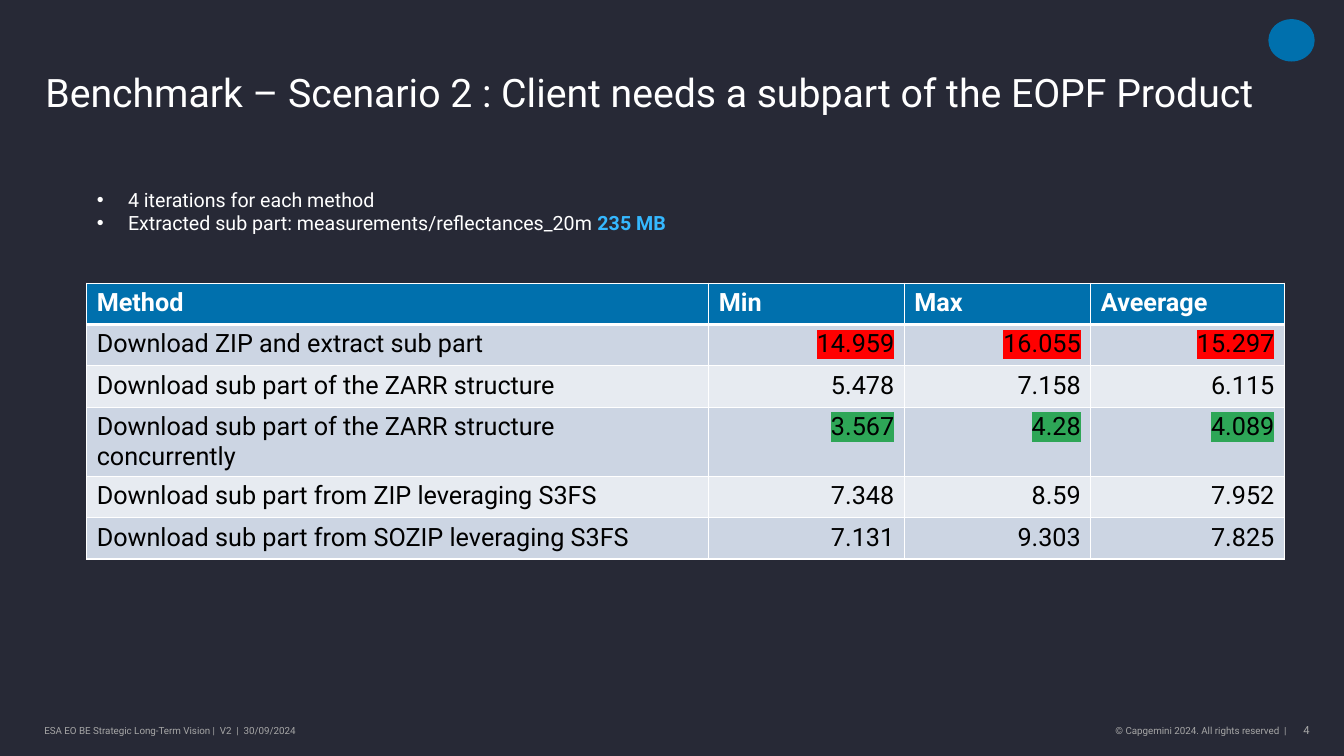
import pptx
import pptx.util
import pptx.dml.color
import pptx.enum.shapes
import pptx.enum.text
import pptx.oxml
import pptx.oxml.ns
from lxml import etree

Inches = pptx.util.Inches
Pt = pptx.util.Pt
ALIGN = pptx.enum.text.PP_ALIGN
ANCHOR = pptx.enum.text.MSO_ANCHOR

BACKGROUND, BLUE, SKY = "272936", "0070AD", "35B8FF"
WHITE, BLACK, GREY = "FFFFFF", "000000", "A6A6A6"
BANDS = ["CCD5E3", "E7EBF1"]
RED, GREEN = "FF0000", "2EA657"

HEADER = ["Method", "Min", "Max", "Aveerage"]
RESULTS = [
    ("Download ZIP and extract sub part", "14.959", "16.055", "15.297"),
    ("Download sub part of the ZARR structure", "5.478", "7.158", "6.115"),
    ("Download sub part of the ZARR structure concurrently", "3.567", "4.28", "4.089"),
    ("Download sub part from ZIP leveraging S3FS", "7.348", "8.59", "7.952"),
    ("Download sub part from SOZIP leveraging S3FS", "7.131", "9.303", "7.825"),
]
HIGHLIGHTS = {1: RED, 3: GREEN}
COLUMN_WIDTHS = [6.17, 1.94, 1.85, 1.92]


def rgb(code):
    return pptx.dml.color.RGBColor.from_string(code)


def add_xml(parent, tag, **attributes):
    return etree.SubElement(parent, pptx.oxml.ns.qn(tag), attributes)


def apply(target, values):
    for name, value in values.items():
        setattr(target, name, value)


class SlideBuilder:
    font = "Roboto"

    def __init__(self, deck):
        self.page = deck.slides.add_slide(deck.slide_layouts[1])
        fill = self.page.background.fill
        fill.solid()
        fill.fore_color.rgb = rgb(BACKGROUND)

    def span(self, para, text, size, color, bold=False, highlight=None):
        span = para.add_run()
        span.text = text
        apply(span.font, {"size": Pt(size), "bold": bold})
        span.font.color.rgb = rgb(color)
        if highlight:
            properties = span.font._element
            mark = add_xml(properties, "a:highlight")
            add_xml(mark, "a:srgbClr", val=highlight)
        span.font.name = self.font

    def frame(self, box, place, inset=(0, 0), anchor=ANCHOR.MIDDLE):
        apply(box, dict(zip(("left", "top", "width", "height"), map(Inches, place))))
        across, down = map(Inches, inset)
        apply(box.text_frame, {
            "margin_left": across, "margin_right": across,
            "margin_top": down, "margin_bottom": down,
            "word_wrap": True, "vertical_anchor": anchor,
            "auto_size": pptx.enum.text.MSO_AUTO_SIZE.NONE,
        })
        return box.text_frame

    def title(self, text, place):
        frame = self.frame(self.page.shapes.title, place, anchor=ANCHOR.BOTTOM)
        para = frame.paragraphs[0]
        apply(para, {"alignment": ALIGN.LEFT, "line_spacing": 0.9})
        self.span(para, text, 28, WHITE)

    def bullets(self, items, place):
        frame = self.frame(self.page.placeholders[1], place, (0.1, 0.05))
        for index, spans in enumerate(items):
            para = frame.add_paragraph() if index else frame.paragraphs[0]
            apply(para, {"space_before": Pt(0), "alignment": ALIGN.LEFT})
            properties = para._p.get_or_add_pPr()
            indent = Inches(0.31)
            properties.set("marL", str(indent))
            properties.set("indent", str(-indent))
            add_xml(properties, "a:buFont", typeface="Arial")
            add_xml(properties, "a:buChar", char="•")
            for text, color, bold in spans:
                self.span(para, text, 14, color, bold)

    def label(self, text, place, size=7, align=ALIGN.LEFT, **layout):
        box = self.page.shapes.add_textbox(0, 0, 0, 0)
        para = self.frame(box, place, **layout).paragraphs[0]
        para.alignment = align
        self.span(para, text, size, GREY)

    def oval(self, place, color):
        kind = pptx.enum.shapes.MSO_SHAPE.OVAL
        shape = self.page.shapes.add_shape(kind, *map(Inches, place))
        shape.shadow.inherit = False
        shape.fill.solid()
        shape.fill.fore_color.rgb = rgb(color)
        shape.line.fill.background()

    def borders(self, cell, widths):
        properties = cell._tc.get_or_add_tcPr()
        for side, width in zip("LRTB", widths):
            line = add_xml(properties, "a:ln" + side, w=str(Pt(width)))
            add_xml(add_xml(line, "a:solidFill"), "a:srgbClr", val=WHITE)

    def cell(self, cell, text, fill, widths, align, **style):
        self.borders(cell, widths)
        cell.fill.solid()
        cell.fill.fore_color.rgb = rgb(fill)
        para = cell.text_frame.paragraphs[0]
        para.alignment = align
        self.span(para, text, 18, **style)

    def table(self, header, rows, place, column_widths, row_height):
        size = len(rows) + 1, len(header)
        table = self.page.shapes.add_table(*size, *map(Inches, place)).table
        for column, width in zip(table.columns, column_widths):
            column.width = Inches(width)
        for row in table.rows:
            row.height = Inches(row_height)
        for index, text in enumerate(header):
            self.cell(table.cell(0, index), text, BLUE, (1, 1, 1, 3),
                      ALIGN.LEFT, color=WHITE, bold=True)
        for number, row in enumerate(rows, 1):
            widths = (1, 1, 3 if number == 1 else 1, 1)
            for index, text in enumerate(row):
                self.cell(table.cell(number, index), text, BANDS[(number - 1) % 2],
                          widths, ALIGN.RIGHT if index else ALIGN.LEFT, color=BLACK,
                          highlight=HIGHLIGHTS.get(number) if index else None)


def main():
    deck = pptx.Presentation()
    deck.slide_width, deck.slide_height = Inches(13.33), Inches(7.5)
    slide = SlideBuilder(deck)

    # Corner mark and heading
    slide.oval((12.58, 0.19, 0.46, 0.42), BLUE)
    slide.title("Benchmark – Scenario 2 : Client needs a subpart of the EOPF Product",
                (0.45, 0.28, 12.04, 0.87))

    # Test conditions
    slide.bullets([
        [("4 iterations for each method", WHITE, False)],
        [("Extracted sub part: measurements/reflectances_20m ", WHITE, False),
         ("235 MB", SKY, True)],
    ], (0.86, 1.81, 5.96, 0.57))

    # Benchmark results
    slide.table(HEADER, RESULTS, (0.86, 2.81, 11.88, 2.46), COLUMN_WIDTHS, 0.41)

    # Footer
    slide.label("ESA EO BE Strategic Long-Term Vision |  V2  |  30/09/2024",
                (0.44, 7.13, 3.73, 0.24))
    slide.label("© Capgemini 2024. All rights reserved  |",
                (7.8, 7.13, 4.96, 0.24), align=ALIGN.RIGHT)
    slide.label("4", (12.74, 7.13, 0.25, 0.24), size=8, align=ALIGN.RIGHT,
                inset=(0, 0.05), anchor=ANCHOR.TOP)

    deck.save("out.pptx")


if __name__ == "__main__":
    main()
